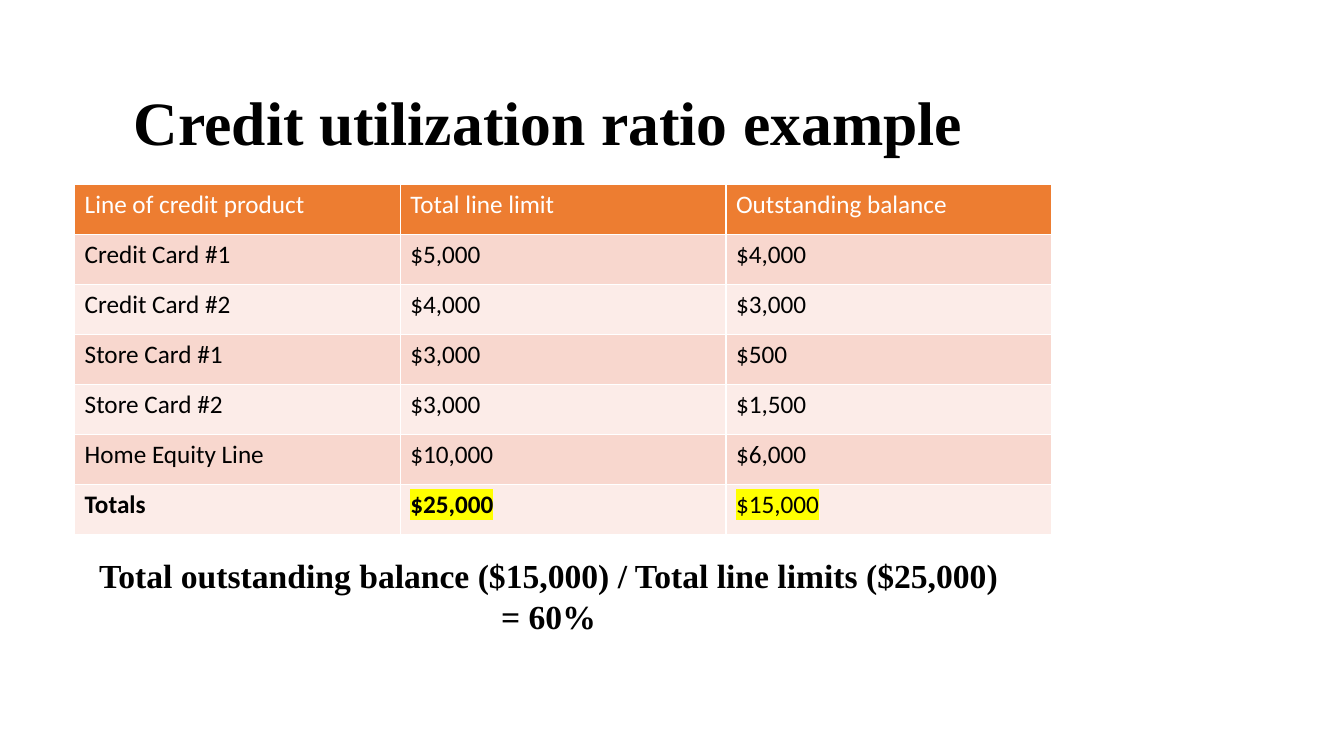
import pptx
import pptx.dml.color
import pptx.enum.text
import pptx.oxml
import pptx.oxml.ns
import pptx.util
from pptx.util import Inches

COLORS = {
    "text": "000000",
    "white": "FFFFFF",
    "header": "ED7D31",
    "band_dark": "F8D7CE",
    "band_light": "FCECE8",
    "highlight": "FFFF00",
}
CREDIT_LINES = [
    ("Line of credit product", "Total line limit", "Outstanding balance"),
    ("Credit Card #1", "$5,000", "$4,000"),
    ("Credit Card #2", "$4,000", "$3,000"),
    ("Store Card #1", "$3,000", "$500"),
    ("Store Card #2", "$3,000", "$1,500"),
    ("Home Equity Line", "$10,000", "$6,000"),
    ("Totals", "$25,000", "$15,000"),
]
TOTALS_ROW = len(CREDIT_LINES) - 1


class SlideBuilder:
    heading_font = "Times New Roman"
    table_font = "Calibri"

    def __init__(self, slide):
        self.slide = slide

    def format_run(self, run, font, size, color, bold):
        run.font.name = font
        run.font.size = pptx.util.Pt(size)
        run.font.bold = bold
        run.font.color.rgb = pptx.dml.color.RGBColor.from_string(COLORS[color])

    def add_text(self, text, left, top, width, height, size, anchor, spacing):
        shape = self.slide.shapes.add_textbox(
            Inches(left), Inches(top), Inches(width), Inches(height))
        frame = shape.text_frame
        frame.word_wrap = True
        frame.vertical_anchor = anchor
        frame.text = text
        for paragraph in frame.paragraphs:
            paragraph.alignment = pptx.enum.text.PP_ALIGN.CENTER
            paragraph.line_spacing = spacing
            for run in paragraph.runs:
                self.format_run(run, self.heading_font, size, "text", True)

    def add_borders(self, cell):
        properties = cell._tc.get_or_add_tcPr()
        for position, side in enumerate(("lnL", "lnR", "lnT", "lnB")):
            line = pptx.oxml.parse_xml(
                f'<a:{side} {pptx.oxml.ns.nsdecls("a")} w="{pptx.util.Pt(1)}">'
                f'<a:solidFill><a:srgbClr val="{COLORS["white"]}"/></a:solidFill>'
                f'</a:{side}>')
            properties.insert(position, line)

    def add_highlight(self, run):
        highlight = pptx.oxml.parse_xml(
            f'<a:highlight {pptx.oxml.ns.nsdecls("a")}>'
            f'<a:srgbClr val="{COLORS["highlight"]}"/></a:highlight>')
        fill = run.font._element.find(pptx.oxml.ns.qn("a:solidFill"))
        fill.addnext(highlight)

    def add_credit_table(self, left, top, width, height):
        table = self.slide.shapes.add_table(
            len(CREDIT_LINES), len(CREDIT_LINES[0]),
            Inches(left), Inches(top), Inches(width), Inches(height)).table
        for row, values in enumerate(CREDIT_LINES):
            if row == 0:
                fill, text_color = "header", "white"
            else:
                fill = "band_dark" if row % 2 else "band_light"
                text_color = "text"
            for column, value in enumerate(values):
                cell = table.cell(row, column)
                cell.fill.solid()
                cell.fill.fore_color.rgb = pptx.dml.color.RGBColor.from_string(COLORS[fill])
                self.add_borders(cell)
                cell.text_frame.text = value
                run = cell.text_frame.paragraphs[0].runs[0]
                is_total = row == TOTALS_ROW
                self.format_run(run, self.table_font, 18, text_color, is_total and column < 2)
                if is_total and column > 0:
                    self.add_highlight(run)


def main():
    presentation = pptx.Presentation()
    presentation.slide_width = Inches(13.33)
    presentation.slide_height = Inches(7.5)
    builder = SlideBuilder(presentation.slides.add_slide(presentation.slide_layouts[6]))
    anchors = pptx.enum.text.MSO_ANCHOR
    builder.add_text("Credit utilization ratio example",
                     0.74, 0.53, 9.4, 1.44, 44, anchors.MIDDLE, 0.9)
    builder.add_credit_table(0.74, 1.83, 9.69, 3.47)
    builder.add_text("Total outstanding balance ($15,000) / Total line limits ($25,000)\n= 60%",
                     0.74, 5.46, 9.4, 1.7, 24, anchors.TOP, 1.0)
    presentation.save("out.pptx")


if __name__ == "__main__":
    main()
